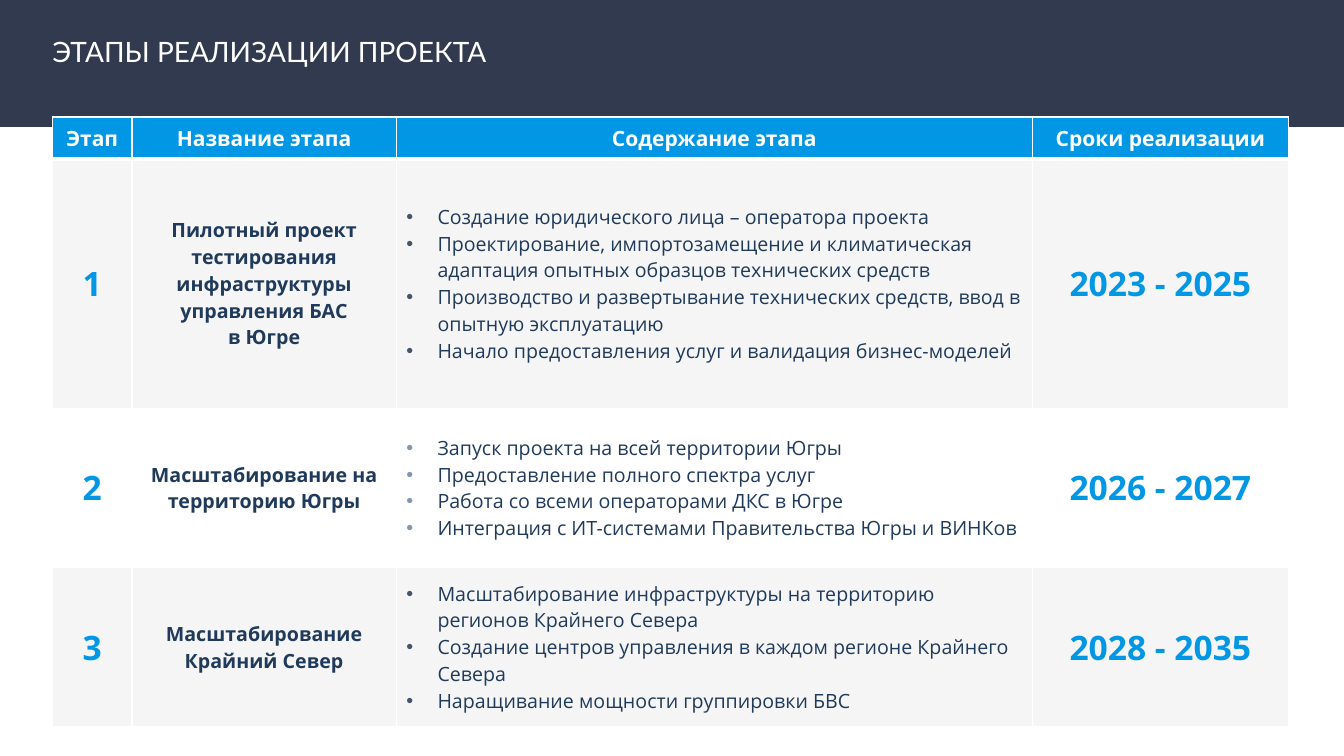
"""Build the slide with the table of project stages."""
from lxml import etree
from pptx import Presentation
from pptx.dml.color import RGBColor
from pptx.enum import shapes, text
from pptx.oxml import ns
from pptx.util import Inches, Pt

COLORS = {
    "band": "323A4F", "accent": "0297E5", "text": "203A5B", "white": "FFFFFF",
    "gray": "F2F2F2", "dark_bullet": "44546A", "light_bullet": "8497B0",
}
HEADERS = ["Этап", "Название этапа", "Содержание этапа", "Сроки реализации"]
STAGES = [
    (["Пилотный проект тестирования инфраструктуры управления БАС", "в Югре"],
     ["Создание юридического лица – оператора проекта",
      "Проектирование, импортозамещение и климатическая адаптация опытных образцов технических средств",
      "Производство и развертывание технических средств, ввод в опытную эксплуатацию",
      "Начало предоставления услуг и валидация бизнес-моделей"],
     "2023 - 2025"),
    (["Масштабирование на территорию Югры"],
     ["Запуск проекта на всей территории Югры",
      "Предоставление полного спектра услуг",
      "Работа со всеми операторами ДКС в Югре",
      "Интеграция с ИТ-системами Правительства Югры и ВИНКов"],
     "2026 - 2027"),
    (["Масштабирование Крайний Север"],
     ["Масштабирование инфраструктуры на территорию регионов Крайнего Севера",
      "Создание центров управления в каждом регионе Крайнего Севера",
      "Наращивание мощности группировки БВС"],
     "2028 - 2035"),
]
COLUMN_WIDTHS = [0.79, 2.62, 6.31, 2.54]
ROW_HEIGHTS = [0.42, 2.47, 1.58, 1.58]


def write_cell(cell, lines, size, color, bold=True, bullet=None):
    """Fill a cell with centred lines, or with a bulleted list."""
    cell.vertical_anchor = text.MSO_ANCHOR.MIDDLE
    frame = cell.text_frame
    for index, line in enumerate(lines):
        paragraph = frame.paragraphs[0] if index == 0 else frame.add_paragraph()
        paragraph.alignment = text.PP_ALIGN.LEFT if bullet else text.PP_ALIGN.CENTER
        run = paragraph.add_run()
        run.text = line
        run.font.name = "Open Sans"
        run.font.size = Pt(size)
        run.font.bold = bold
        run.font.color.rgb = RGBColor.from_string(COLORS[color])
        if bullet:
            properties = paragraph._p.get_or_add_pPr()
            properties.set("marL", str(Inches(0.31)))
            properties.set("indent", str(Inches(-0.31)))
            bullet_color = etree.SubElement(properties, ns.qn("a:buClr"))
            etree.SubElement(bullet_color, ns.qn("a:srgbClr"), val=COLORS[bullet])
            etree.SubElement(properties, ns.qn("a:buFont"), typeface="Arial")
            etree.SubElement(properties, ns.qn("a:buChar"), char="•")


def paint_cell(cell, color, opacity, bottom_width):
    """Set the fill, its opacity and the white borders of a cell."""
    cell.fill.solid()
    cell.fill.fore_color.rgb = RGBColor.from_string(COLORS[color])
    properties = cell._tc.get_or_add_tcPr()
    if opacity < 100:
        fill_color = properties.find(".//" + ns.qn("a:srgbClr"))
        etree.SubElement(fill_color, ns.qn("a:alpha"), val=str(opacity * 1000))
    widths = {"lnL": 1, "lnR": 1, "lnT": 1, "lnB": bottom_width}
    for index, (side, width) in enumerate(widths.items()):
        border = etree.Element(ns.qn("a:" + side), w=str(Pt(width)))
        border_fill = etree.SubElement(border, ns.qn("a:solidFill"))
        etree.SubElement(border_fill, ns.qn("a:srgbClr"), val=COLORS["white"])
        properties.insert(index, border)


presentation = Presentation()
presentation.slide_width = Inches(13.33)
presentation.slide_height = Inches(7.5)
slide = presentation.slides.add_slide(presentation.slide_layouts[5])

band = slide.shapes.add_shape(
    shapes.MSO_SHAPE.RECTANGLE, Inches(0), Inches(-0.04), Inches(13.36), Inches(1.3))
band.shadow.inherit = False
band.fill.solid()
band.fill.fore_color.rgb = RGBColor.from_string(COLORS["band"])
band.line.fill.background()

title = slide.shapes.title
title._element.addprevious(band._element)
title.left, title.top = Inches(0.42), Inches(0.29)
title.width, title.height = Inches(10.31), Inches(0.44)
title.text_frame.vertical_anchor = text.MSO_ANCHOR.TOP
title.text_frame.auto_size = text.MSO_AUTO_SIZE.SHAPE_TO_FIT_TEXT
title_paragraph = title.text_frame.paragraphs[0]
title_paragraph.alignment = text.PP_ALIGN.LEFT
title_run = title_paragraph.add_run()
title_run.text = "ЭТАПЫ РЕАЛИЗАЦИИ ПРОЕКТА"
title_run.font.name = "Lato"
title_run.font.size = Pt(20)
title_run.font.color.rgb = RGBColor.from_string(COLORS["white"])

table = slide.shapes.add_table(
    len(ROW_HEIGHTS), len(COLUMN_WIDTHS), Inches(0.52), Inches(1.16),
    Inches(sum(COLUMN_WIDTHS)), Inches(sum(ROW_HEIGHTS))).table
for column, width in zip(table.columns, COLUMN_WIDTHS):
    column.width = Inches(width)
for row, height in zip(table.rows, ROW_HEIGHTS):
    row.height = Inches(height)

for cell, header in zip(table.rows[0].cells, HEADERS):
    write_cell(cell, [header], 15, "white")
    paint_cell(cell, "accent", 100, 3)

for number, (name, tasks, years) in enumerate(STAGES, start=1):
    shaded = number % 2 == 1
    cells = list(table.rows[number].cells)
    write_cell(cells[0], [str(number)], 24, "accent")
    write_cell(cells[1], name, 14, "text")
    write_cell(cells[2], tasks, 14, "text", bold=False,
               bullet="dark_bullet" if shaded else "light_bullet")
    write_cell(cells[3], [years], 24, "accent")
    for cell in cells:
        paint_cell(cell, "gray" if shaded else "white", 70, 1)

presentation.save("out.pptx")
